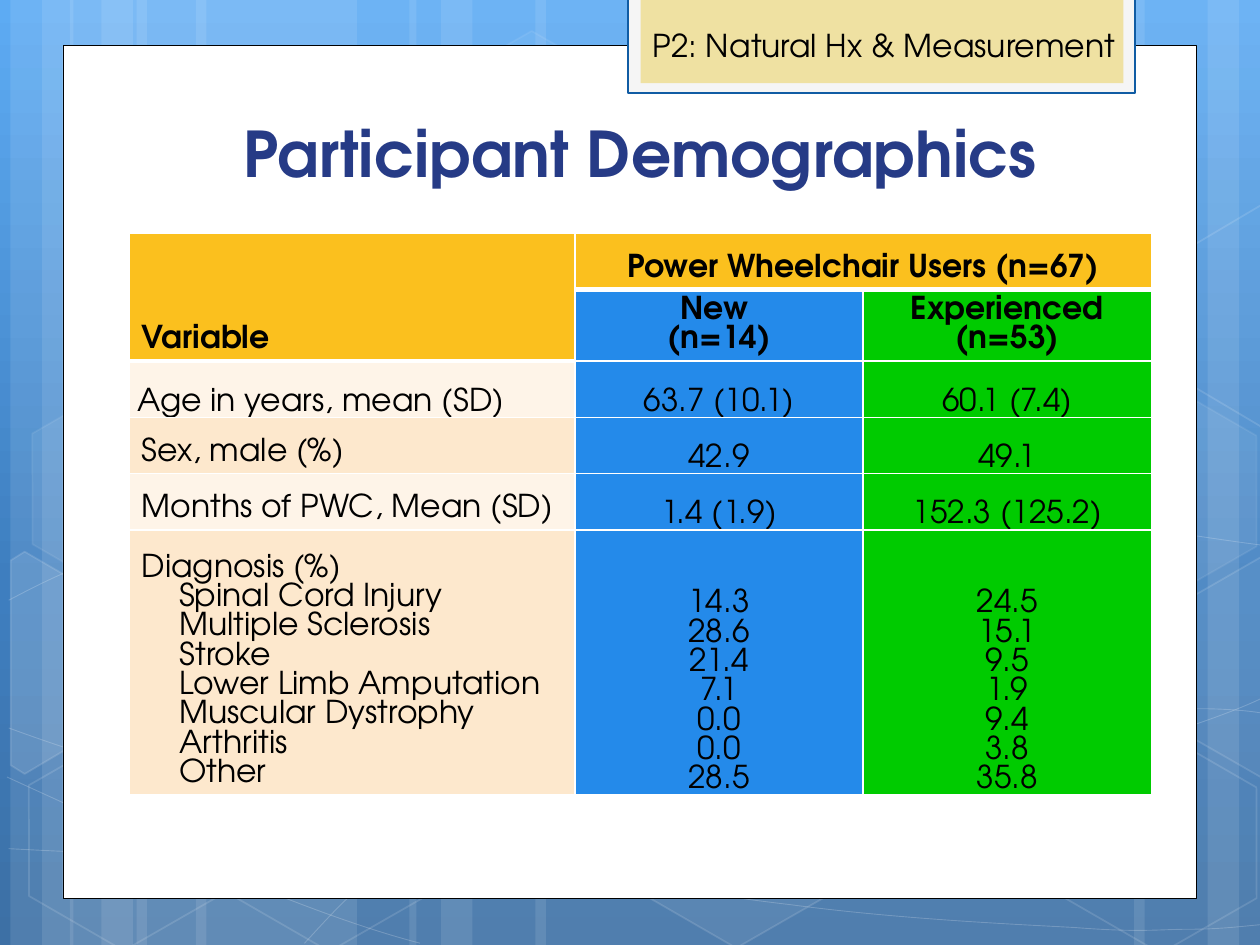
from copy import deepcopy
from math import cos, radians, sin
from lxml.etree import SubElement
from pptx import Presentation
from pptx.dml.color import RGBColor
from pptx.enum.shapes import MSO_SHAPE as Shape
from pptx.enum.text import MSO_ANCHOR as Anchor, PP_ALIGN as Align
from pptx.oxml import parse_xml
from pptx.oxml.ns import nsdecls, qn
from pptx.util import Pt

COLORS = {
    "white": "FFFFFF", "black": "000000", "title": "263B86",
    "sky": "5DABF3", "mid": "3E7EBF", "deep": "3D70A5",
    "tab": "F5F5F5", "tab_line": "105CA4", "sand": "EFE1A2",
    "gold": "FBC01E", "blue": "248AEA", "green": "00CB00",
    "cream": "FEF4E8", "peach": "FDE8CD",
}
FONT = "TeX Gyre Adventor"


def paint(shape, fill, line=None, width=0, fill_alpha=100, line_alpha=100):
    shape.shadow.inherit = False
    for part, color, alpha in ((shape.fill, fill, fill_alpha), (shape.line.fill, line, line_alpha)):
        if not color:
            part.background()
            continue
        part.solid()
        part.fore_color.rgb = RGBColor.from_string(COLORS[color])
        if alpha < 100:
            tint = part._xPr.find(qn("a:solidFill"))[0]
            SubElement(tint, qn("a:alpha"), val=str(alpha * 1000))
    if line:
        shape.line.width = Pt(width)


def write_text(frame, lines, size, color, bold, paragraph_format):
    for index, line in enumerate(lines):
        paragraph = frame.paragraphs[0] if index == 0 else frame.add_paragraph()
        for name, value in paragraph_format.items():
            setattr(paragraph, name, value)
        run = paragraph.add_run()
        run.text = line
        run.font.color.rgb = RGBColor.from_string(COLORS[color])
        for name, value in {"name": FONT, "size": Pt(size), "bold": bold}.items():
            setattr(run.font, name, value)


presentation = Presentation()
presentation.slide_width = Pt(720)
presentation.slide_height = Pt(540)
slide = presentation.slides.add_slide(presentation.slide_layouts[6])
shapes = slide.shapes

background = slide.background.fill
background.gradient()
background.gradient_angle = 270
stops = background.gradient_stops
stops[0]._gs.addnext(deepcopy(stops[0]._gs))
for stop, (position, color) in zip(background.gradient_stops, ((0, "sky"), (0.62, "mid"), (1, "deep"))):
    stop.position = position
    stop.color.rgb = RGBColor.from_string(COLORS[color])

bands = [
    (78, 126, 0), (6, 36, 0), (24, 60, 0), (112, 126, 0), (40, 36, 0), (58, 60, 0),
    (528, 126, 180), (690, 36, 180), (648, 60, 180), (306, 222, 0), (234, 36, 0), (252, 60, 0),
]
for left, width, rotation in bands:
    band = shapes.add_shape(Shape.RECTANGLE, Pt(left), 0, Pt(width), Pt(540))
    band.rotation = rotation
    paint(band, "white", fill_alpha=10)

curves = [
    [(5, 485), (44, 487), (83, 489), (137, 488), (191, 487), (258, 486), (330, 479),
     (402, 472), (504, 458), (570, 444), (636, 431), (703, 409), (725, 397)],
    [(5, 343), (26, 332), (47, 321), (87, 310), (128, 299), (186, 284), (250, 279),
     (315, 274), (392, 273), (471, 279), (550, 284), (682, 307), (725, 312)],
    [(4, 444), (91, 484), (178, 523), (240, 539)],
    [(5, 416), (27, 424), (50, 432), (92, 444), (134, 454), (197, 472), (257, 485),
     (317, 497), (392, 510), (452, 517), (512, 525), (576, 528), (614, 530),
     (652, 533), (662, 531), (680, 531), (699, 531), (712, 529), (725, 528)],
    [(174, 539), (187, 525), (200, 510), (217, 498), (235, 485), (259, 470), (279, 460),
     (300, 450), (312, 446), (338, 438), (364, 431), (413, 421), (438, 416),
     (464, 411), (467, 411), (490, 410), (512, 408), (547, 405), (572, 405),
     (597, 404), (638, 405), (638, 405), (654, 405), (670, 405), (686, 405),
     (699, 405), (711, 406), (718, 407), (724, 408), (722, 407), (724, 408)],
]
for controls in curves:
    points = [(Pt(x), Pt(y)) for x, y in controls]
    builder = shapes.build_freeform(*points[0])
    builder.add_line_segments(points[1:], close=False)
    curve = builder.convert_to_shape()
    segments = list(curve._element.iter(qn("a:lnTo")))
    for start in range(0, len(segments), 3):
        bezier = parse_xml(f'<a:cubicBezTo {nsdecls("a")}/>')
        segments[start].addprevious(bezier)
        for segment in segments[start:start + 3]:
            bezier.append(segment[0])
            segment.getparent().remove(segment)
    paint(curve, None, "white", 0.5, line_alpha=20)

hexagons = [
    (240.5, 26, 4, 8), (358, 424, 6, 12), (8, 425.5, 0, 12), (10, 224.5, 7, 8),
    (125.5, 426, 0, 12), (542, 326, 10, 12), (600.5, 427, 0, 12), (600.5, 226, 7, 8),
]
for left, top, fill_alpha, line_alpha in hexagons:
    hexagon = shapes.add_shape(Shape.HEXAGON, Pt(left), Pt(top), Pt(126), Pt(109.5))
    hexagon.rotation = 30
    hexagon.adjustments[0] = 0.29
    paint(hexagon, "white" if fill_alpha else None, "white", 1, fill_alpha, line_alpha)

edge_hexagons = [
    ((26, 385), [(6, 320), (14, 315), (69, 347), (68, 410), (14, 442), (6, 437)], 10),
    ((709, 374.5), [(667, 349), (721, 318), (726, 321), (726, 441), (721, 444), (667, 413)], 4),
    ((709, 173.5), [(667, 149), (721, 117), (727, 121), (726, 241), (721, 244), (667, 212)], 0),
]
cosine, sine = cos(radians(30)), sin(radians(30))
for (center_x, center_y), corners, fill_alpha in edge_hexagons:
    points = []
    for x, y in corners:
        dx, dy = x - center_x, y - center_y
        points.append((Pt(center_x + dx * cosine + dy * sine), Pt(center_y - dx * sine + dy * cosine)))
    builder = shapes.build_freeform(*points[0])
    builder.add_line_segments(points[1:], close=True)
    edge = builder.convert_to_shape()
    edge.rotation = 30
    paint(edge, "white" if fill_alpha else None, "white", 1, fill_alpha, 12)

panels = [
    (36, 26, 648, 487.25, "white", "black", 0.5),
    (359, -1.5, 289.5, 54.5, "tab", "tab_line", 1.25),
    (366, -1.5, 276, 49, "sand", None, 0),
]
for left, top, width, height, fill, line, line_width in panels:
    panel = shapes.add_shape(Shape.RECTANGLE, Pt(left), Pt(top), Pt(width), Pt(height))
    paint(panel, fill, line, line_width)

labels = [
    ("Participant Demographics", (89.25, 72, 553, 40), 36, "title", True, Align.CENTER, Anchor.BOTTOM),
    ("P2: Natural Hx & Measurement", (365.75, 11.5, 282, 29), 18, "black", False, Align.LEFT, Anchor.TOP),
]
for text, box, size, color, bold, alignment, anchor in labels:
    frame = shapes.add_textbox(*map(Pt, box)).text_frame
    frame.word_wrap = bold
    frame.vertical_anchor = anchor
    write_text(frame, [text], size, color, bold, {"alignment": alignment})

diagnoses = [
    "Spinal Cord Injury", "Multiple Sclerosis", "Stroke", "Lower Limb Amputation",
    "Muscular Dystrophy", "Arthritis", "Other",
]
rows = [
    (32.25, ["Variable"], ["Power Wheelchair Users (n=67)"], []),
    (40.5, [], ["New ", "(n=14)"], ["Experienced (n=53)"]),
    (32.25, ["Age in years, mean (SD)"], ["63.7 (10.1)"], ["60.1 (7.4)"]),
    (32.25, ["Sex, male (%)"], ["42.9"], ["49.1"]),
    (32.25, ["Months of PWC, Mean (SD)"], ["1.4 (1.9)"], ["152.3 (125.2)"]),
    (151.25, ["Diagnosis (%)"] + diagnoses,
     ["14.3", "28.6", "21.4", "7.1", "0.0", "0.0", "28.5"],
     ["24.5", "15.1", "9.5", "1.9", "9.4", "3.8", "35.8"]),
]
widths = (254.75, 164.75, 164.75)
height = sum(row[0] for row in rows)
table = shapes.add_table(len(rows), 3, Pt(73.75), Pt(133.25), Pt(sum(widths)), Pt(height)).table
for name in ("first_row", "horz_banding"):
    setattr(table, name, False)
for column, width in zip(table.columns, widths):
    column.width = Pt(width)
table.cell(0, 0).merge(table.cell(1, 0))
table.cell(0, 1).merge(table.cell(0, 2))

for row_index, (row_height, *texts) in enumerate(rows):
    table.rows[row_index].height = Pt(row_height)
    for column_index, lines in enumerate(texts):
        cell = table.cell(row_index, column_index)
        header = row_index < 2
        gold = row_index == 0 or (header and column_index == 0)
        body = ("cream" if row_index % 2 == 0 else "peach", "blue", "green")[column_index]
        cell.fill.solid()
        cell.fill.fore_color.rgb = RGBColor.from_string(COLORS["gold" if gold else body])
        cell.vertical_anchor = Anchor.BOTTOM
        if row_index == 2 or (not header and column_index > 0):
            margins = {"margin_left": 5, "margin_right": 5, "margin_top": 0, "margin_bottom": 0}
            for name, value in margins.items():
                setattr(cell, name, Pt(value))
        alignment = Align.CENTER if column_index else Align.LEFT
        write_text(cell.text_frame, lines, 18, "black", header,
                   {"alignment": alignment, "line_spacing": Pt(16.75)})
        for paragraph in cell.text_frame.paragraphs:
            if paragraph.text in diagnoses:
                paragraph._p.get_or_add_pPr().set("marL", str(Pt(21.5)))
        properties = cell._tc.get_or_add_tcPr()
        for index, side in enumerate("LRTB"):
            border = Pt(3 if side == "B" and gold else 1)
            properties.insert(index, parse_xml(
                f'<a:ln{side} {nsdecls("a")} w="{border}"><a:solidFill>'
                f'<a:srgbClr val="{COLORS["white"]}"/></a:solidFill></a:ln{side}>'))

presentation.save("out.pptx")
